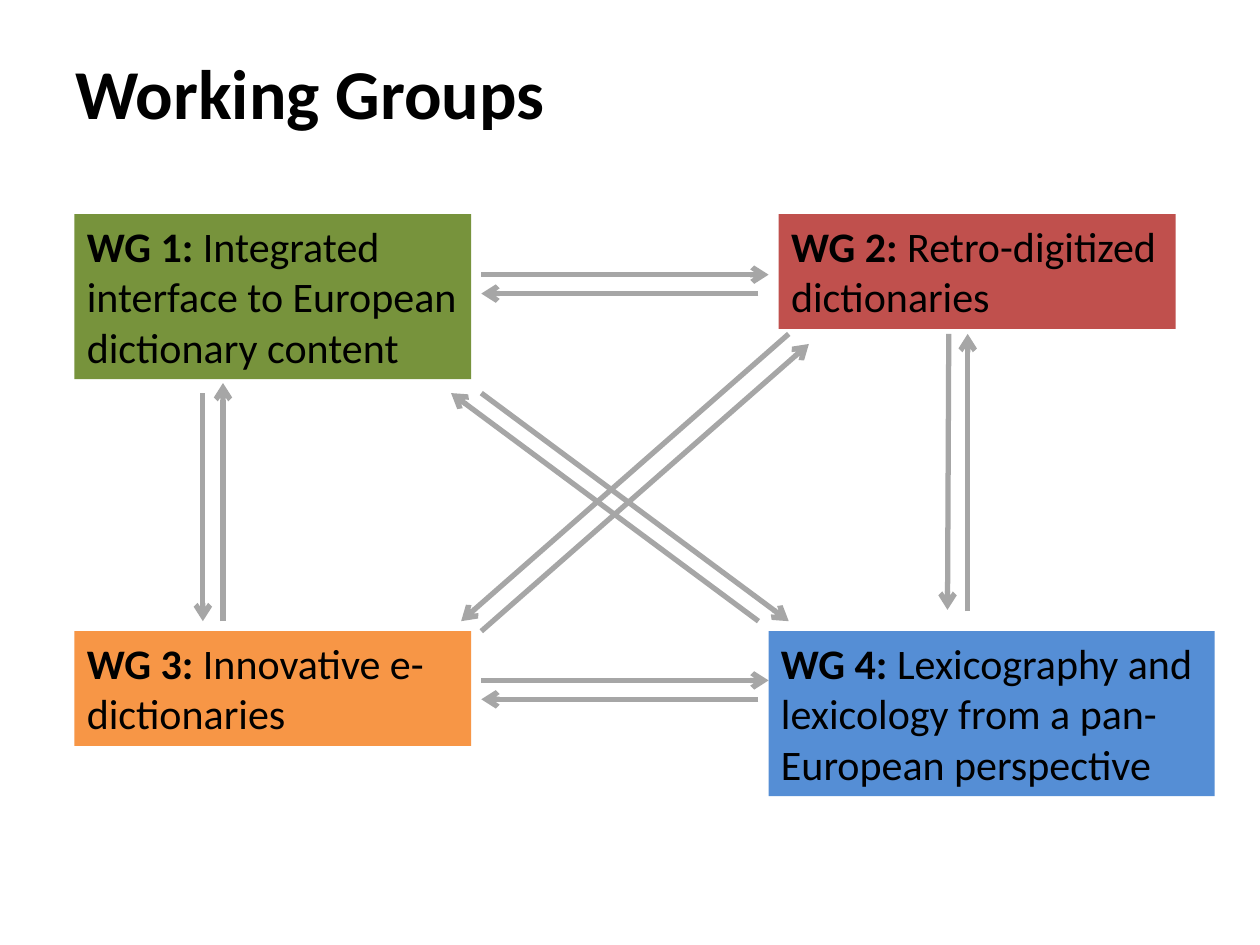
import pptx
import pptx.util
import pptx.dml.color
import pptx.enum.shapes
import pptx.enum.text
import pptx.oxml.ns
from lxml import etree

Inches = pptx.util.Inches
Pt = pptx.util.Pt
RGBColor = pptx.dml.color.RGBColor

BLACK = RGBColor(0x00, 0x00, 0x00)
GREEN = RGBColor(0x77, 0x93, 0x3C)
RED = RGBColor(0xC0, 0x50, 0x4D)
ORANGE = RGBColor(0xF7, 0x96, 0x46)
BLUE = RGBColor(0x55, 0x8E, 0xD5)
GRAY = RGBColor(0xA6, 0xA6, 0xA6)
FONT = "Calibri"

GROUPS = [
    (0, 0, 3.15, 1.31, GREEN, "WG 1:", "Integrated interface to European dictionary content"),
    (5.59, 0, 3.15, 0.91, RED, "WG 2:", "Retro-digitized dictionaries"),
    (0, 3.31, 3.15, 0.91, ORANGE, "WG 3:", "Innovative e-dictionaries"),
    (5.51, 3.31, 3.54, 1.31, BLUE, "WG 4:", "Lexicography and lexicology from a pan-European perspective"),
]

DIAGONALS = [
    (3.23, 3.31, 5.83, 1.03),
    (5.67, 0.95, 3.07, 3.23),
    (5.43, 3.23, 2.99, 1.42),
    (3.23, 1.42, 5.67, 3.23),
]


def style_font(font, size):
    font.name = FONT
    font.size = Pt(size)
    font.color.rgb = BLACK


def add_title(s, left, top, width, height, text):
    tf = s.shapes.add_textbox(Inches(left), Inches(top), Inches(width), Inches(height)).text_frame
    tf.word_wrap = True
    tf.vertical_anchor = pptx.enum.text.MSO_ANCHOR.MIDDLE
    p = tf.paragraphs[0]
    p.text = text
    style_font(p.font, 40)
    p.font.bold = True


def add_group(s, left, top, width, height, color, label, text):
    sp = s.shapes.add_shape(pptx.enum.shapes.MSO_SHAPE.RECTANGLE,
                            Inches(left), Inches(top), Inches(width), Inches(height))
    sp.shadow.inherit = False
    sp.fill.solid()
    sp.fill.fore_color.rgb = color
    sp.line.fill.background()
    tf = sp.text_frame
    tf.word_wrap = True
    tf.auto_size = pptx.enum.text.MSO_AUTO_SIZE.SHAPE_TO_FIT_TEXT
    tf.vertical_anchor = pptx.enum.text.MSO_ANCHOR.TOP
    p = tf.paragraphs[0]
    p.alignment = pptx.enum.text.PP_ALIGN.LEFT
    style_font(p.font, 24)
    r = p.add_run()
    r.text = label + " "
    r.font.bold = True
    p.add_run().text = text


def add_arrow(s, x1, y1, x2, y2):
    line = s.shapes.add_connector(pptx.enum.shapes.MSO_CONNECTOR.STRAIGHT,
                                  Inches(x1), Inches(y1), Inches(x2), Inches(y2))
    line.line.color.rgb = GRAY
    line.line.width = Pt(3)
    qn = pptx.oxml.ns.qn
    etree.SubElement(line.line._get_or_add_ln(), qn("a:tailEnd"), type="arrow")
    etree.SubElement(line._element.spPr, qn("a:effectLst"))


def add_diagram(s, left, top):
    for x, y, width, height, color, label, text in GROUPS:
        add_group(s, left + x, top + y, width, height, color, label, text)
    horizontals = [arrow for y in (0.48, 3.7)
                   for arrow in ((3.23, y, 5.51, y), (5.43, y + 0.15, 3.23, y + 0.15))]
    verticals = [
        (6.94, 0.95, 6.93, 3.14),
        (7.09, 3.15, 7.09, 0.95),
        (1.02, 1.42, 1.02, 3.23),
        (1.18, 3.23, 1.18, 1.34),
    ]
    for x1, y1, x2, y2 in horizontals + verticals + DIAGONALS:
        add_arrow(s, left + x1, top + y1, left + x2, top + y2)


def main():
    prs = pptx.Presentation()
    prs.slide_width = Inches(10)
    prs.slide_height = Inches(7.5)
    s = prs.slides.add_slide(prs.slide_layouts[6])
    add_title(s, 0.5, 0.3, 9, 0.85, "Working Groups")
    add_diagram(s, 0.59, 1.7)
    prs.save("out.pptx")


if __name__ == "__main__":
    main()
